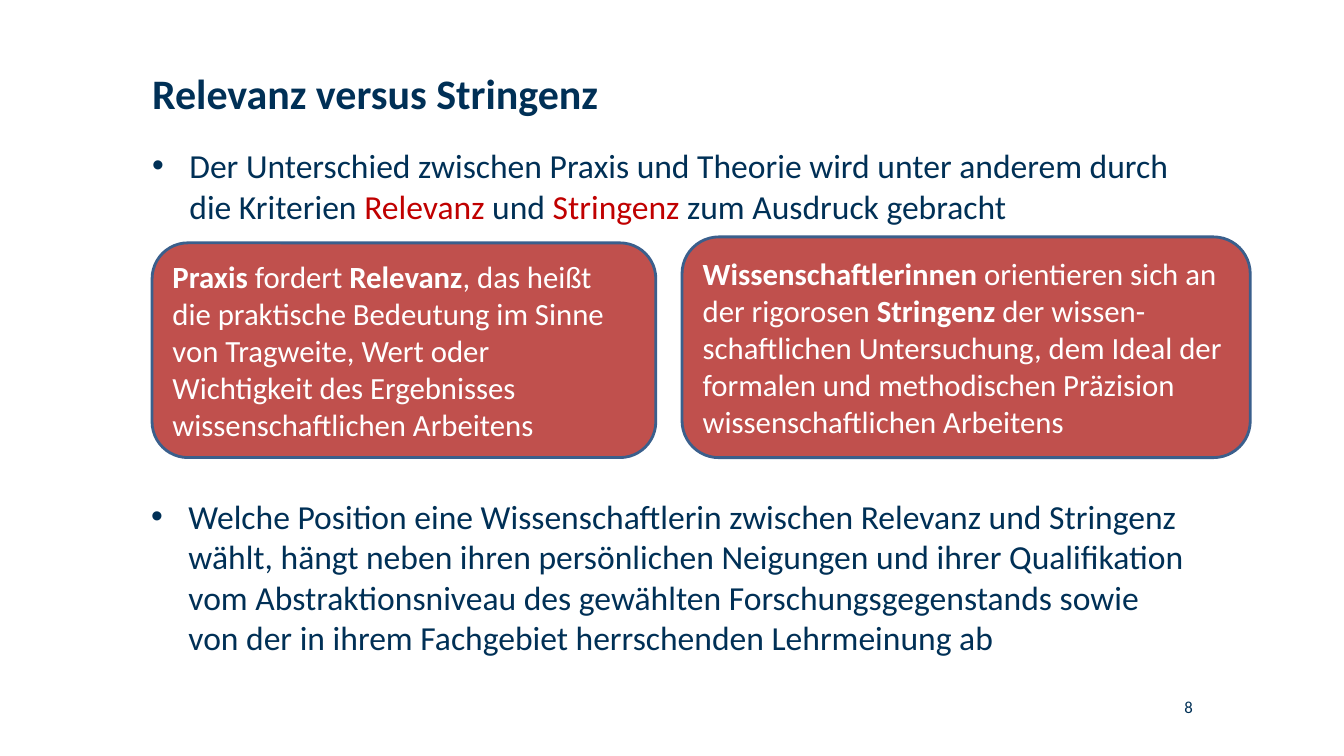
from dataclasses import dataclass

from lxml.etree import SubElement
from pptx import Presentation
from pptx.dml.color import RGBColor
from pptx.enum.shapes import MSO_SHAPE
from pptx.enum.text import MSO_ANCHOR, PP_ALIGN
from pptx.oxml.ns import qn
from pptx.util import Inches, Pt


@dataclass(frozen=True)
class Theme:
    font: str = "Calibri"
    navy: RGBColor = RGBColor(0x00, 0x30, 0x56)
    accent: RGBColor = RGBColor(0xC0, 0x00, 0x00)
    card: RGBColor = RGBColor(0xC0, 0x50, 0x4D)
    outline: RGBColor = RGBColor(0x3A, 0x5F, 0x8C)
    white: RGBColor = RGBColor(0xFF, 0xFF, 0xFF)
    title_size: int = 30
    body_size: int = 24
    card_size: int = 22
    number_size: int = 12


THEME = Theme()
BULLET_INDENT = Inches(0.37)

INTRODUCTION = [
    ("Der Unterschied zwischen Praxis und Theorie wird unter anderem durch die Kriterien ", False),
    ("Relevanz", True),
    (" und ", False),
    ("Stringenz", True),
    (" zum Ausdruck gebracht", False),
]
PRACTICE = [
    ("Praxis ", True),
    ("fordert ", False),
    ("Relevanz", True),
    (", das heißt die praktische Bedeutung im Sinne von Tragweite, Wert oder "
     "Wichtigkeit des Ergebnisses wissenschaftlichen Arbeitens", False),
]
SCIENCE = [
    ("Wissenschaftlerinnen", True),
    (" orientieren sich an der rigorosen ", False),
    ("Stringenz", True),
    (" der wissen-schaftlichen Untersuchung, dem Ideal der formalen und "
     "methodischen Präzision wissenschaftlichen Arbeitens", False),
]
CONCLUSION = [
    ("Welche Position eine Wissenschaftlerin zwischen Relevanz und Stringenz wählt, "
     "hängt neben ihren persönlichen Neigungen und ihrer Qualifikation vom "
     "Abstraktionsniveau des gewählten Forschungsgegenstands sowie von der in ihrem "
     "Fachgebiet herrschenden Lehrmeinung ab", False),
]


def apply_format(target, values):
    for name, value in values.items():
        setattr(target, name, value)


def place(shape, box):
    apply_format(shape, dict(zip(("left", "top", "width", "height"), map(Inches, box))))


def format_frame(frame, anchor=MSO_ANCHOR.TOP):
    apply_format(frame, {
        "word_wrap": True, "vertical_anchor": anchor,
        "margin_left": 0, "margin_top": 0, "margin_right": 0, "margin_bottom": 0,
    })


def add_run(paragraph, text, size, color, bold=False):
    run = paragraph.add_run()
    run.text = text
    apply_format(run.font, {"name": THEME.font, "size": Pt(size), "bold": bold})
    run.font.color.rgb = color


def add_title(slide, box, text):
    title = slide.shapes.title
    place(title, box)
    format_frame(title.text_frame)
    paragraph = title.text_frame.paragraphs[0]
    paragraph.alignment = PP_ALIGN.LEFT
    add_run(paragraph, text, THEME.title_size, THEME.navy, True)


def add_text_box(slide, box):
    text_box = slide.shapes.add_textbox(*map(Inches, box))
    format_frame(text_box.text_frame)
    return text_box.text_frame.paragraphs[0]


def add_bullet(slide, box, segments):
    paragraph = add_text_box(slide, box)
    properties = paragraph._p.get_or_add_pPr()
    properties.set("marL", str(BULLET_INDENT))
    properties.set("indent", str(-BULLET_INDENT))
    SubElement(properties, qn("a:buFont"), typeface="Arial")
    SubElement(properties, qn("a:buChar"), char="•")
    for text, highlighted in segments:
        add_run(paragraph, text, THEME.body_size, THEME.accent if highlighted else THEME.navy)


def add_card(slide, box, segments):
    card = slide.shapes.add_shape(MSO_SHAPE.ROUNDED_RECTANGLE, *map(Inches, box))
    card.shadow.inherit = False
    card.fill.solid()
    card.fill.fore_color.rgb = THEME.card
    card.line.color.rgb = THEME.outline
    card.line.width = Pt(2)
    apply_format(card.text_frame, {"word_wrap": True, "vertical_anchor": MSO_ANCHOR.MIDDLE})
    paragraph = card.text_frame.paragraphs[0]
    paragraph.alignment = PP_ALIGN.LEFT
    for text, bold in segments:
        add_run(paragraph, text, THEME.card_size, THEME.white, bold)


def add_page_number(slide, box, number):
    paragraph = add_text_box(slide, box)
    paragraph.alignment = PP_ALIGN.RIGHT
    add_run(paragraph, number, THEME.number_size, THEME.navy)


def main():
    presentation = Presentation()
    apply_format(presentation, {"slide_width": Inches(13.34), "slide_height": Inches(7.5)})
    slide = presentation.slides.add_slide(presentation.slide_layouts[5])
    add_title(slide, (1.51, 0.67, 7.06, 1.37), "Relevanz versus Stringenz")
    add_bullet(slide, (1.51, 1.44, 10.31, 0.98), INTRODUCTION)
    add_page_number(slide, (10.3, 6.91, 1.54, 0.2), "8")
    add_card(slide, (1.51, 2.41, 5, 2.13), PRACTICE)
    add_card(slide, (6.77, 2.35, 5.64, 2.19), SCIENCE)
    add_bullet(slide, (1.5, 4.92, 10.31, 1.67), CONCLUSION)
    presentation.save("out.pptx")


if __name__ == "__main__":
    main()
